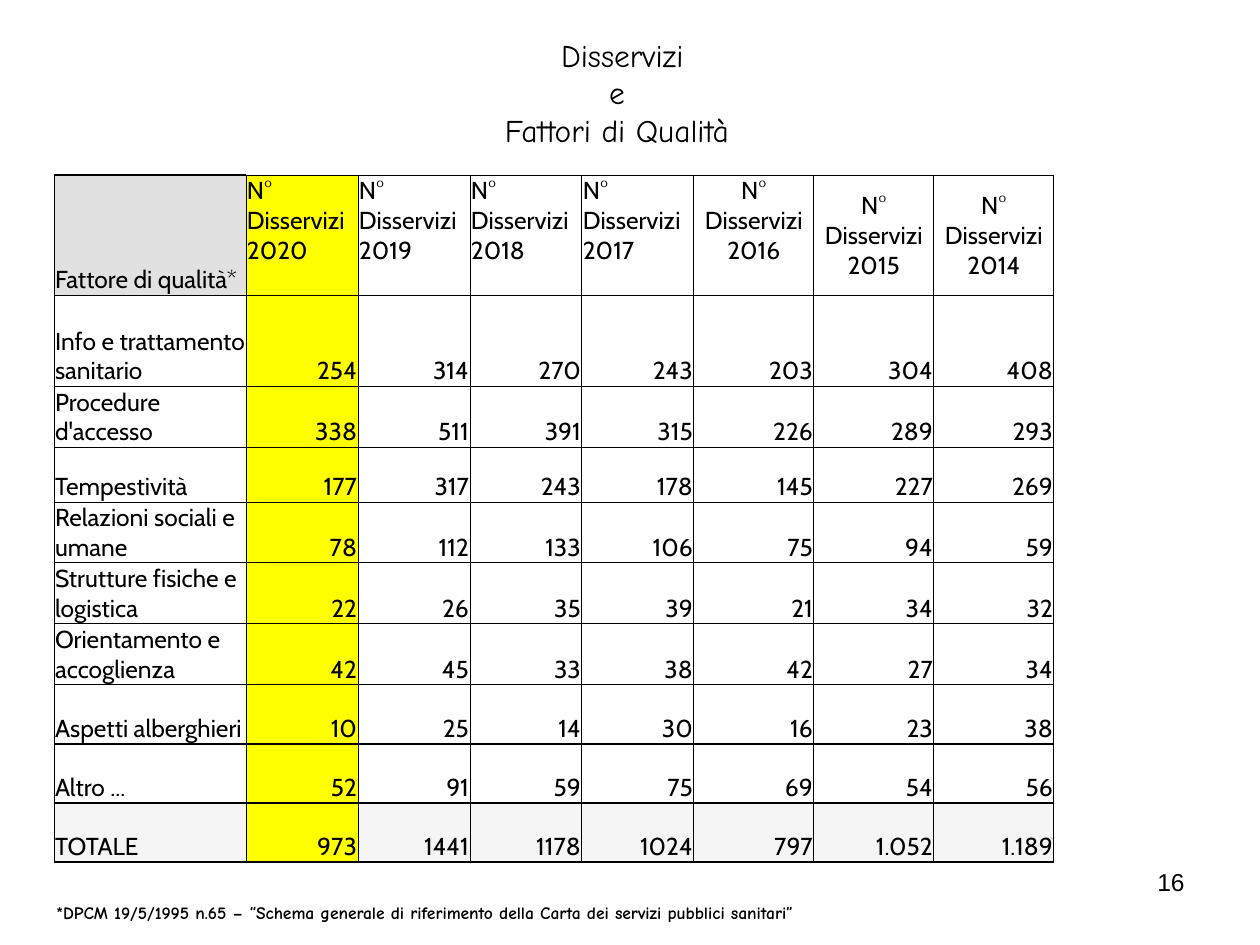
import pptx
import pptx.util
import pptx.dml.color
import pptx.enum.text
import pptx.oxml
import pptx.oxml.ns

PX = 914400 // 126
HUES = {"ink": "000000", "white": "FFFFFF", "mark": "FFFF00",
        "head": "E1E1E1", "total": "F5F5F5"}
ALIGN = pptx.enum.text.PP_ALIGN
ANCHOR = pptx.enum.text.MSO_ANCHOR

YEARS = range(2020, 2013, -1)
DATA = [
    ("Info e trattamento sanitario", 254, 314, 270, 243, 203, 304, 408),
    ("Procedure d'accesso", 338, 511, 391, 315, 226, 289, 293),
    ("Tempestività", 177, 317, 243, 178, 145, 227, 269),
    ("Relazioni sociali e umane", 78, 112, 133, 106, 75, 94, 59),
    ("Strutture fisiche e logistica", 22, 26, 35, 39, 21, 34, 32),
    ("Orientamento e accoglienza", 42, 45, 33, 38, 42, 27, 34),
    ("Aspetti alberghieri", 10, 25, 14, 30, 16, 23, 38),
    ("Altro ...", 52, 91, 59, 75, 69, 54, 56),
    ("TOTALE", 973, 1441, 1178, 1024, 797, "1.052", "1.189"),
]
ROWS = [("Fattore di qualità*", *(f"N° Disservizi {year}" for year in YEARS)), *DATA]
WIDTHS = [192] + [112] * 4 + [120] * 3
HEIGHTS = [120, 91, 61, 55, 61, 61, 61, 59, 59, 59]


def dress(item, form):
    """Set every attribute that the format dict names."""
    for name, value in form.items():
        setattr(item, name, value)


def write(frame, lines, font, para):
    """Fill a text frame with one formatted paragraph per line."""
    frame.text = "\n".join(lines)
    for block in frame.paragraphs:
        dress(block, para)
        for run in block.runs:
            dress(run.font, font)
            run.font.color.rgb = pptx.dml.color.RGBColor.from_string(HUES["ink"])


deck = pptx.Presentation()
dress(deck, {"slide_width": 1260 * PX, "slide_height": 945 * PX})
slide = deck.slides.add_slide(deck.slide_layouts[5])

# Title, page number and footnote
comic = {"name": "Comic Neue", "size": pptx.util.Pt(18)}
tight = {"line_spacing": 0.8, "space_before": pptx.util.Pt(4)}
note = "*DPCM 19/5/1995 n.65 – “Schema generale di riferimento della Carta dei servizi pubblici sanitari”"
texts = [
    (slide.shapes.title, (302, 37, 630, 120),
     [" Disservizi", "e", "Fattori di Qualità"],
     comic, {**tight, "alignment": ALIGN.CENTER}),
    (slide.shapes.add_textbox(0, 0, 0, 0), (903, 861, 294, 66), ["16"],
     {"name": "Arial", "size": pptx.util.Pt(14)}, {"alignment": ALIGN.RIGHT}),
    (slide.shapes.add_textbox(0, 0, 0, 0), (44, 900, 1131, 30), [note],
     {**comic, "size": pptx.util.Pt(10), "bold": True},
     {**tight, "space_before": pptx.util.Pt(2)}),
]
for box, place, lines, font, para in texts:
    dress(box, dict(zip(("left", "top", "width", "height"), (n * PX for n in place))))
    dress(box.text_frame, {"word_wrap": True, "vertical_anchor": ANCHOR.TOP,
                           "auto_size": pptx.enum.text.MSO_AUTO_SIZE.NONE})
    write(box.text_frame, lines, font, para)

# Table of failures by quality factor and year
table = slide.shapes.add_table(
    len(ROWS), len(WIDTHS), 54 * PX, 175 * PX,
    sum(WIDTHS) * PX, sum(HEIGHTS) * PX).table
dress(table, {"first_row": False, "horz_banding": False})
for col, width in zip(table.columns, WIDTHS):
    col.width = width * PX
for row, height in zip(table.rows, HEIGHTS):
    row.height = height * PX

cabin = {"name": "Cabin", "size": pptx.util.Pt(14)}
last = len(ROWS) - 1
for r, row in enumerate(ROWS):
    for c, value in enumerate(row):
        cell = table.cell(r, c)
        align, anchor, hue = ALIGN.RIGHT, ANCHOR.BOTTOM, "white"
        if c == 0:
            align = ALIGN.LEFT
        elif r == 0:
            align = ALIGN.LEFT if c < 5 else ALIGN.CENTER
            anchor = ANCHOR.TOP if c < 6 else ANCHOR.MIDDLE
        if c == 1:
            hue = "mark"
        elif r == last:
            hue = "total"
        elif r == c == 0:
            hue = "head"
        dress(cell, {"margin_left": PX, "margin_right": PX, "margin_top": PX,
                     "margin_bottom": 0, "vertical_anchor": anchor})
        write(cell.text_frame, [str(value)], cabin, {"alignment": align})
        thick = {"T": r >= last - 1 or r == c == 0, "B": r >= last - 2}
        for side in "LRTB":
            size = pptx.util.Pt(1 if thick.get(side) else 0.5)
            cell._tc.get_or_add_tcPr().append(pptx.oxml.parse_xml(
                f'<a:ln{side} {pptx.oxml.ns.nsdecls("a")} w="{size}"><a:solidFill>'
                f'<a:srgbClr val="{HUES["ink"]}"/></a:solidFill></a:ln{side}>'))
        cell.fill.solid()
        cell.fill.fore_color.rgb = pptx.dml.color.RGBColor.from_string(HUES[hue])

deck.save("out.pptx")
